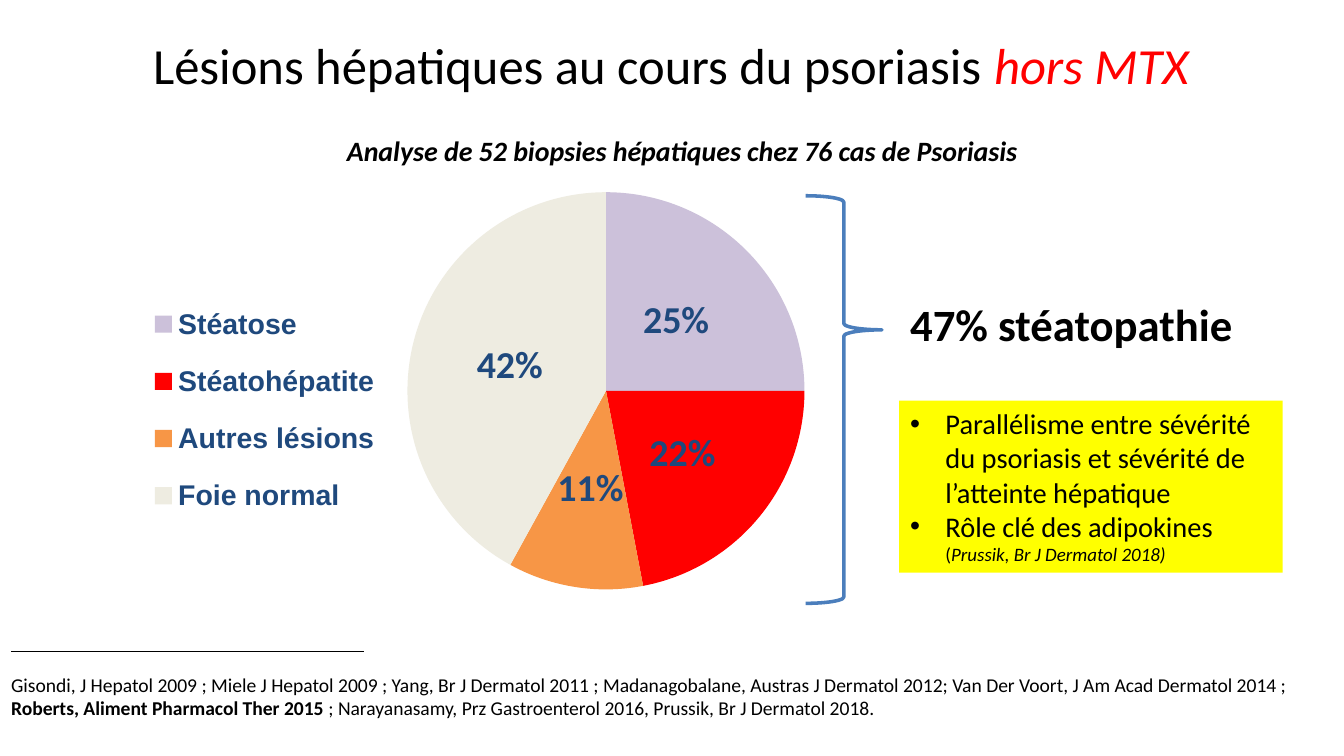
"""Build a slide on liver lesions in psoriasis: a pie chart, a brace and key findings."""
from dataclasses import dataclass

from lxml.etree import SubElement
from pptx import Presentation
from pptx.chart.data import CategoryChartData
from pptx.dml.color import RGBColor
from pptx.enum.chart import XL_CHART_TYPE as Chart
from pptx.enum.chart import XL_LABEL_POSITION as LabelPosition
from pptx.enum.chart import XL_LEGEND_POSITION as LegendPosition
from pptx.enum.shapes import MSO_CONNECTOR as Connector
from pptx.enum.shapes import MSO_SHAPE as Shape
from pptx.enum.text import MSO_ANCHOR as Anchor
from pptx.enum.text import PP_ALIGN as Align
from pptx.oxml import parse_xml
from pptx.oxml.ns import nsdecls, qn
from pptx.util import Inches, Pt

TITLE = [[("Lésions hépatiques au cours du psoriasis ", {}),
          ("hors MTX", {"color": "FF0000", "italic": True})]]
SUBTITLE = [[("Analyse de 52 biopsies hépatiques chez 76 cas de Psoriasis", {})]]
HEADLINE = [[("47% stéatopathie", {})]]
FINDINGS = [
    [("Parallélisme entre sévérité du psoriasis et sévérité de l’atteinte hépatique", {})],
    [("Rôle clé des adipokines ", {}), ("(", {"size": 12}),
     ("Prussik, Br J Dermatol 2018)", {"size": 12, "italic": True})],
]
REFERENCES = [[
    ("Gisondi, J Hepatol 2009 ; Miele J Hepatol 2009 ; Yang, Br J Dermatol 2011 ; "
     "Madanagobalane, Austras J Dermatol 2012; Van Der Voort, J Am Acad Dermatol 2014 ; ", {}),
    ("Roberts, Aliment Pharmacol Ther 2015 ", {"bold": True}),
    ("; Narayanasamy, Prz Gastroenterol 2016, Prussik, Br J Dermatol 2018.", {}),
]]
LESIONS = [("Stéatose", 25, "CCC1DA"), ("Stéatohépatite", 22, "FF0000"),
           ("Autres lésions", 11, "F79646"), ("Foie normal", 42, "EEECE1")]

WIDTH, HEIGHT = 11.81, 6.64
AREAS = {
    "title": (0.85, 2.26, 98.14, 12.35),
    "subtitle": (24.98, 16.87, 52.5, 6.02),
    "chart": (9.06, 23.49, 72.06, 63.4),
    "brace": (59.95, 25.9, 5.67, 53.92),
    "headline": (66.89, 38.55, 25.99, 8.73),
    "findings": (66.89, 53.01, 28.54, 22.74),
    "rule": (0.85, 86.14, 26.25, 0),
    "references": (0, 88.25, 99.07, 7.83),
}
PIE_LAYOUT = (0.295, 0.03, 0.41, 0.83)
LEGEND_LAYOUT = (0.015, 0.22, 0.265, 0.53)


@dataclass(frozen=True)
class Theme:
    font: str = "Calibri"
    legend_font: str = "Arial"
    ink: str = "000000"
    navy: str = "1F497D"
    brace: str = "4B7EBC"
    highlight: str = "FFFF00"
    title: float = 32
    headline: float = 28.3
    label: float = 24
    body: float = 18
    subtitle: float = 17.7
    reference: float = 12.4


THEME = Theme()


def area(name):
    left, top, width, height = AREAS[name]
    return (Inches(left * WIDTH / 100), Inches(top * HEIGHT / 100),
            Inches(width * WIDTH / 100), Inches(height * HEIGHT / 100))


def style(font, size, color=THEME.ink, bold=False, italic=False, name=THEME.font):
    font.name, font.size, font.bold, font.italic = name, Pt(size), bold, italic
    font.color.rgb = RGBColor.from_string(color)


def write(box, paragraphs, align=Align.LEFT, anchor=Anchor.TOP, wrap=True, bullet=None, **form):
    frame = box.text_frame
    frame.word_wrap, frame.vertical_anchor = wrap, anchor
    for index, spans in enumerate(paragraphs):
        para = frame.add_paragraph() if index else frame.paragraphs[0]
        para.alignment = align
        if bullet:
            properties = para._p.get_or_add_pPr()
            properties.set("marL", str(Inches(0.31)))
            properties.set("indent", str(-Inches(0.31)))
            SubElement(properties, qn("a:buFont")).set("typeface", "Arial")
            SubElement(properties, qn("a:buChar")).set("char", bullet)
        for text, changes in spans:
            span = para.add_run()
            span.text = text
            style(span.font, **{**form, **changes})


def add_text(page, name, paragraphs, **form):
    write(page.shapes.add_textbox(*area(name)), paragraphs, **form)


def manual_layout(bounds, inner=False):
    target = '<c:layoutTarget val="inner"/>' if inner else ""
    modes = "".join(f'<c:{axis}Mode val="edge"/>' for axis in "xy")
    sizes = "".join(f'<c:{key} val="{share}"/>' for key, share in zip("xywh", bounds))
    return parse_xml(f'<c:layout {nsdecls("c")}><c:manualLayout>{target}{modes}{sizes}'
                     "</c:manualLayout></c:layout>")


def place(parent, layout, after=None):
    for old in parent.findall(qn("c:layout")):
        parent.remove(old)
    if after is None:
        parent.insert(0, layout)
    else:
        after.addnext(layout)


def add_pie(page):
    data = CategoryChartData()
    data.categories = [name for name, _, _ in LESIONS]
    data.add_series("Series 1", [share for _, share, _ in LESIONS])
    chart = page.shapes.add_chart(Chart.PIE, *area("chart"), data).chart
    chart.has_title = False
    style(chart.font, THEME.label, bold=True)
    plot = chart.plots[0]
    plot.vary_by_categories = True
    for index, (_, _, color) in enumerate(LESIONS):
        fill = plot.series[0].points[index].format.fill
        fill.solid()
        fill.fore_color.rgb = RGBColor.from_string(color)
    plot.has_data_labels = True
    labels = plot.data_labels
    labels.show_percentage, labels.show_value = True, False
    labels.number_format, labels.number_format_is_linked = "0%", False
    labels.position = LabelPosition.CENTER
    style(labels.font, THEME.label, THEME.navy, bold=True)
    chart.has_legend = True
    legend = chart.legend
    legend.position, legend.include_in_layout = LegendPosition.LEFT, False
    style(legend.font, THEME.body, THEME.navy, bold=True, name=THEME.legend_font)
    root = chart._chartSpace.chart
    place(root.plotArea, manual_layout(PIE_LAYOUT, inner=True))
    legend_xml = root.find(qn("c:legend"))
    place(legend_xml, manual_layout(LEGEND_LAYOUT), legend_xml.find(qn("c:legendPos")))


def add_brace(page):
    brace = page.shapes.add_shape(Shape.RIGHT_BRACE, *area("brace"))
    brace.shadow.inherit = False
    brace.adjustments[0], brace.adjustments[1] = 0.083, 0.329
    brace.fill.background()
    brace.line.color.rgb = RGBColor.from_string(THEME.brace)
    brace.line.width = Pt(2.25)


def add_findings(page):
    box = page.shapes.add_shape(Shape.RECTANGLE, *area("findings"))
    box.shadow.inherit = False
    box.fill.solid()
    box.fill.fore_color.rgb = RGBColor.from_string(THEME.highlight)
    box.line.fill.background()
    write(box, FINDINGS, bullet="•", size=THEME.body)


def add_rule(page):
    left, top, width, _ = area("rule")
    rule = page.shapes.add_connector(Connector.STRAIGHT, left, top, left + width, top)
    rule.line.color.rgb = RGBColor.from_string(THEME.ink)
    rule.line.width = Pt(0.75)
    SubElement(rule._element.spPr, qn("a:effectLst"))


def main():
    deck = Presentation()
    deck.slide_width, deck.slide_height = Inches(WIDTH), Inches(HEIGHT)
    page = deck.slides.add_slide(deck.slide_layouts[6])
    add_text(page, "title", TITLE, align=Align.CENTER, anchor=Anchor.MIDDLE, size=THEME.title)
    add_pie(page)
    add_brace(page)
    add_text(page, "headline", HEADLINE, wrap=False, size=THEME.headline, bold=True)
    add_text(page, "references", REFERENCES, size=THEME.reference)
    add_rule(page)
    add_text(page, "subtitle", SUBTITLE, wrap=False, size=THEME.subtitle, bold=True, italic=True)
    add_findings(page)
    deck.save("out.pptx")


if __name__ == "__main__":
    main()
